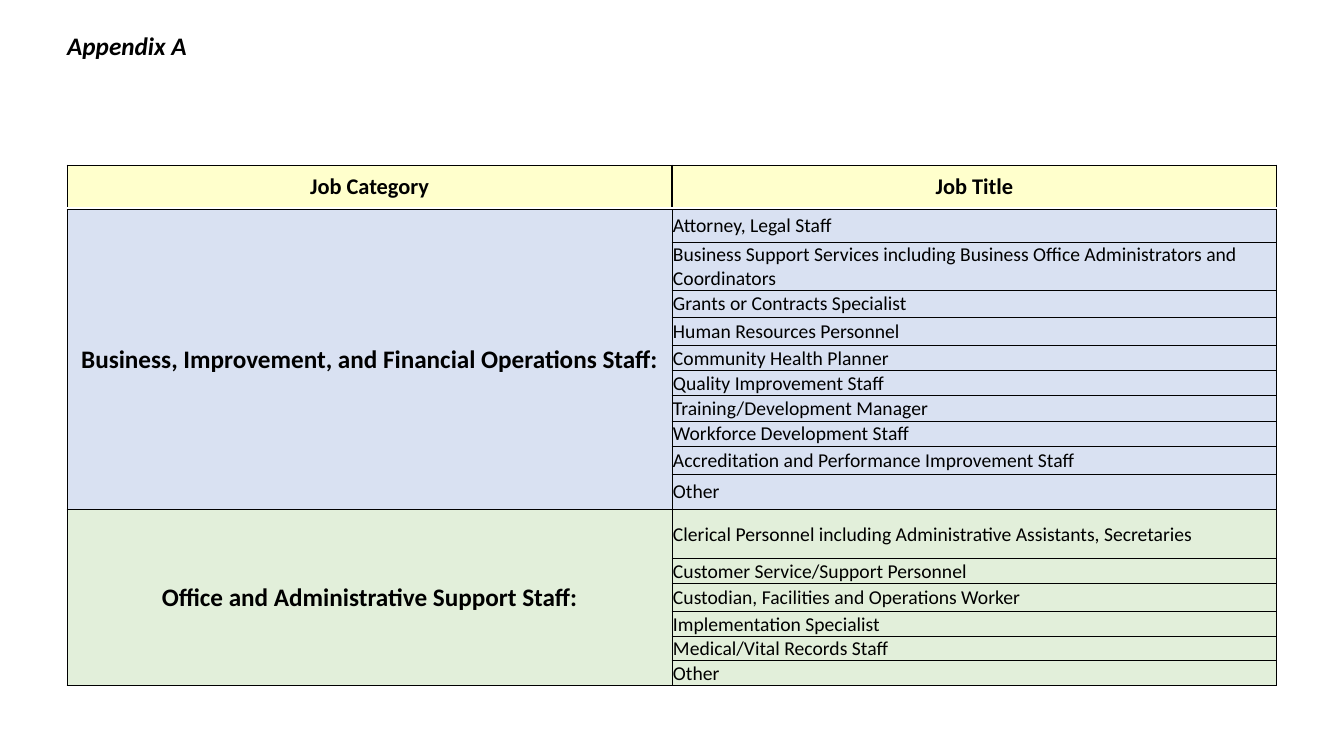
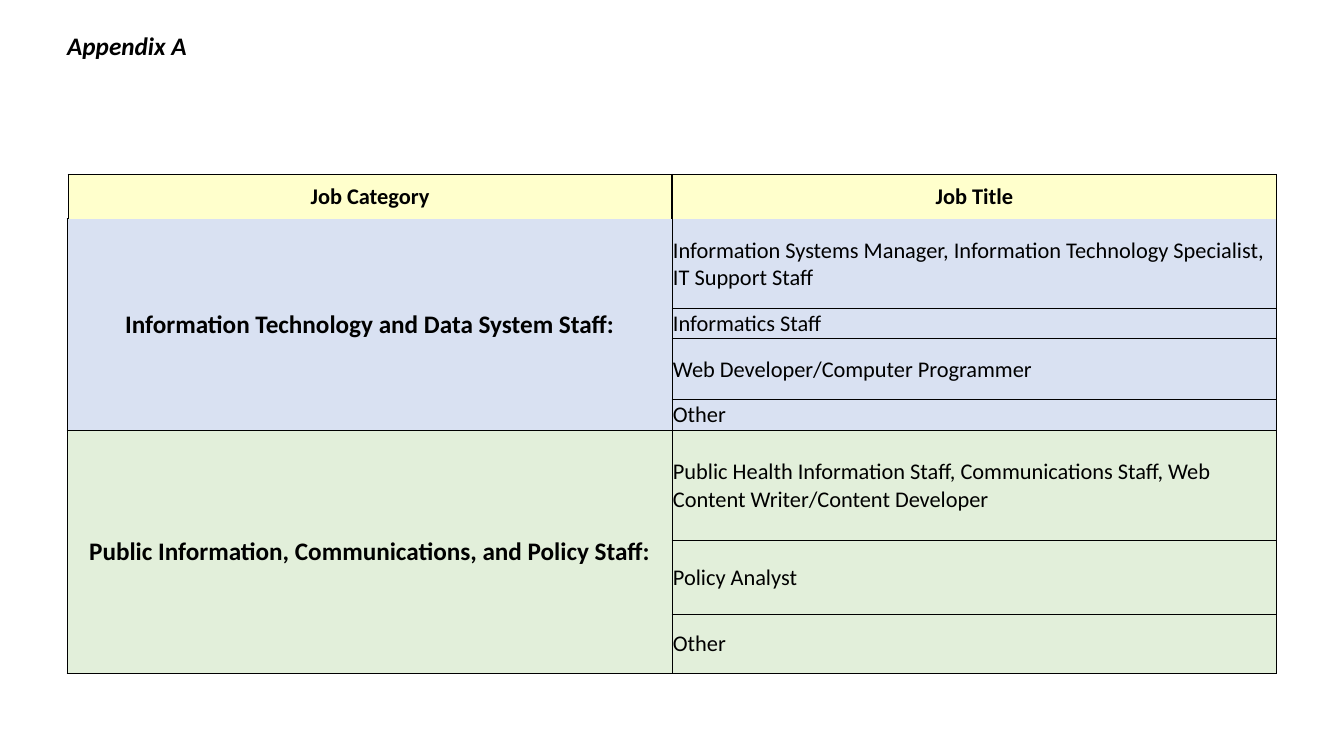
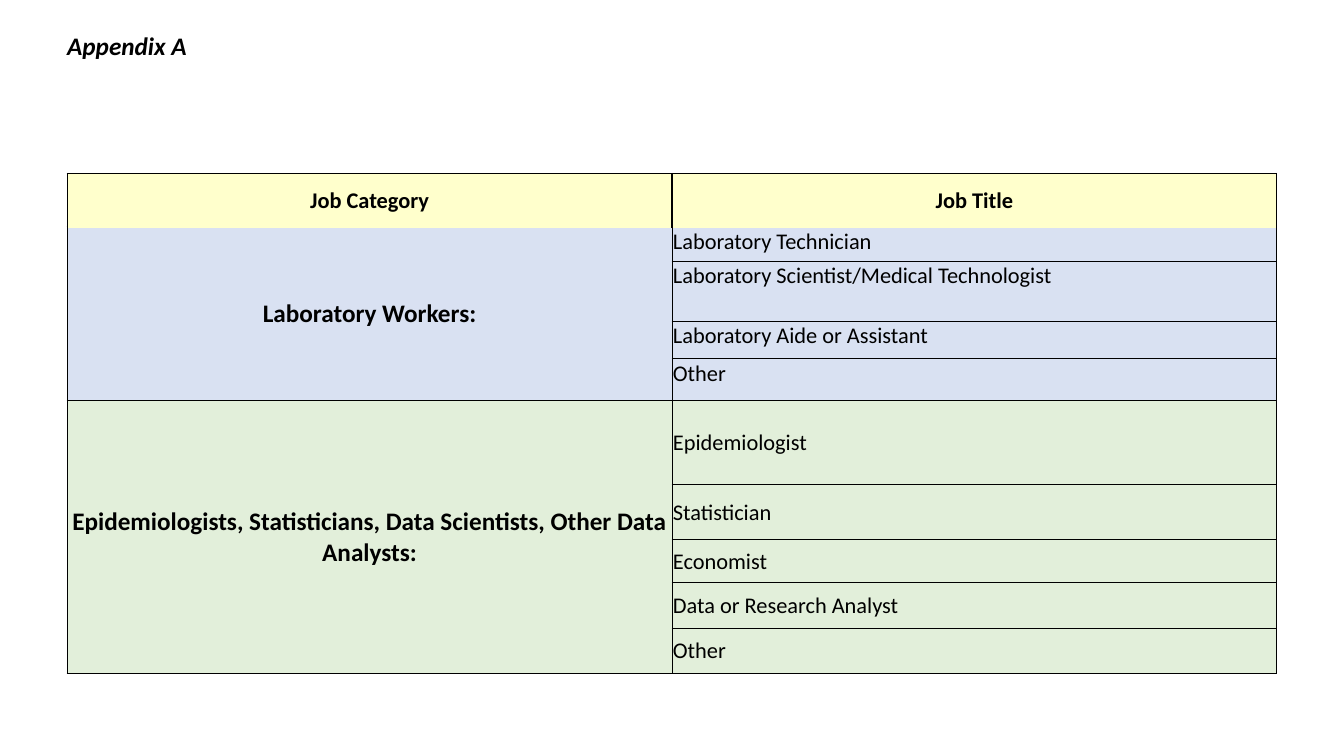
from dataclasses import dataclass
from typing import Optional

from lxml import etree
from pptx import Presentation
from pptx import util as u
from pptx.dml.color import RGBColor
from pptx.enum import text
from pptx.oxml import ns

BLACK = RGBColor(0x00, 0x00, 0x00)
HEADER_YELLOW = RGBColor(0xFF, 0xFF, 0xCC)
GROUP_COLORS = (RGBColor(0xD9, 0xE1, 0xF2), RGBColor(0xE2, 0xEF, 0xDA))

FONT = "Calibri"
TITLE = "Appendix A"
HEADINGS = ("Job Category", "Job Title")

SLIDE_WIDTH = u.Inches(13.33)
SLIDE_HEIGHT = u.Inches(7.5)
GRID = SLIDE_HEIGHT // 750
MARGIN = int(SLIDE_WIDTH * 0.05)
CONTENT_WIDTH = SLIDE_WIDTH - 2 * MARGIN
TITLE_TOP = TITLE_HEIGHT = int(SLIDE_HEIGHT * 0.04)
CELL_INSET = u.Inches(0.01)
THIN, THICK = 0.5, 1.0


@dataclass(frozen=True)
class JobTitle:
    name: str
    grid_rows: int


@dataclass(frozen=True)
class JobGroup:
    category: str
    jobs: tuple[JobTitle, ...]
    anchor: text.MSO_ANCHOR = text.MSO_ANCHOR.MIDDLE


@dataclass(frozen=True)
class JobPage:
    header_top: int
    header_rows: int
    body_top: int
    job_size: int
    groups: tuple[JobGroup, ...]
    header_indent: int = 0


@dataclass(frozen=True)
class Borders:
    left: Optional[float] = THIN
    right: Optional[float] = THIN
    top: Optional[float] = THIN
    bottom: Optional[float] = THIN


HEADER_BORDERS = Borders(THICK, THICK, THICK, None)
CATEGORY_BORDERS = Borders(THICK, THIN, THICK, THICK)

PAGES = (
    JobPage(164, 41, 208, 14, (
        JobGroup("Business, Improvement, and Financial Operations Staff:", (
            JobTitle("Attorney, Legal Staff", 32),
            JobTitle("Business Support Services including Business Office "
                     "Administrators and Coordinators", 46),
            JobTitle("Grants or Contracts Specialist", 27),
            JobTitle("Human Resources Personnel", 28),
            JobTitle("Community Health Planner", 25),
            JobTitle("Quality Improvement Staff", 24),
            JobTitle("Training/Development Manager", 26),
            JobTitle("Workforce Development Staff", 22),
            JobTitle("Accreditation and Performance Improvement Staff", 28),
            JobTitle("Other", 35),
        )),
        JobGroup("Office and Administrative Support Staff:", (
            JobTitle("Clerical Personnel including Administrative Assistants, "
                     "Secretaries", 49),
            JobTitle("Customer Service/Support Personnel", 24),
            JobTitle("Custodian, Facilities and Operations Worker", 28),
            JobTitle("Implementation Specialist", 19),
            JobTitle("Medical/Vital Records Staff", 24),
            JobTitle("Other", 23),
        )),
    )),
    JobPage(173, 44, 217, 16, (
        JobGroup("Information Technology and Data System Staff:", (
            JobTitle("Information Systems Manager, Information Technology "
                     "Specialist, IT Support Staff", 89),
            JobTitle("Informatics Staff", 30),
            JobTitle("Web Developer/Computer Programmer", 60),
            JobTitle("Other", 31),
        )),
        JobGroup("Public Information, Communications, and Policy Staff:", (
            JobTitle("Public Health Information Staff, Communications Staff, "
                     "Web Content Writer/Content Developer", 109),
            JobTitle("Policy Analyst", 73),
            JobTitle("Other", 59),
        )),
    ), header_indent=1),
    JobPage(172, 54, 225, 16, (
        JobGroup("Laboratory Workers:", (
            JobTitle("Laboratory Technician", 34),
            JobTitle("Laboratory Scientist/Medical Technologist", 60),
            JobTitle("Laboratory Aide or Assistant", 37),
            JobTitle("Other", 41),
        ), anchor=text.MSO_ANCHOR.TOP),
        JobGroup("Epidemiologists, Statisticians, Data Scientists, "
                 "Other Data Analysts:", (
            JobTitle("Epidemiologist", 84),
            JobTitle("Statistician", 54),
            JobTitle("Economist", 43),
            JobTitle("Data or Research Analyst", 45),
            JobTitle("Other", 45),
        )),
    )),
)


def write_text(frame, content: str, *, size: int, bold: bool = False,
               italic: bool = False, alignment=text.PP_ALIGN.LEFT) -> None:
    frame.word_wrap = True
    paragraph = frame.paragraphs[0]
    paragraph.alignment = alignment
    run = paragraph.add_run()
    run.text = content
    run.font.name = FONT
    run.font.size = u.Pt(size)
    run.font.bold = bold
    run.font.italic = italic
    run.font.color.rgb = BLACK


def set_borders(cell, borders: Borders) -> None:
    properties = cell._tc.get_or_add_tcPr()
    sides = (("L", borders.left), ("R", borders.right),
             ("T", borders.top), ("B", borders.bottom))
    for side, points in sides:
        line = etree.SubElement(properties, ns.qn(f"a:ln{side}"))
        if points is None:
            etree.SubElement(line, ns.qn("a:noFill"))
            continue
        line.set("w", str(u.Pt(points)))
        fill = etree.SubElement(line, ns.qn("a:solidFill"))
        etree.SubElement(fill, ns.qn("a:srgbClr"), val=str(BLACK))


def style_cell(cell, color: RGBColor, borders: Borders,
               anchor=text.MSO_ANCHOR.MIDDLE) -> None:
    set_borders(cell, borders)
    cell.fill.solid()
    cell.fill.fore_color.rgb = color
    cell.margin_left = cell.margin_right = cell.margin_top = CELL_INSET
    cell.margin_bottom = 0
    cell.vertical_anchor = anchor


def add_grid_table(slide, top: int, row_heights: list[int], indent: int = 0):
    left = MARGIN + indent * GRID
    width = CONTENT_WIDTH - indent * GRID
    table = slide.shapes.add_table(
        len(row_heights), 2, left, top * GRID, width, sum(row_heights) * GRID).table
    table.first_row = table.horz_banding = False
    table.columns[1].width = CONTENT_WIDTH // 2
    table.columns[0].width = width - table.columns[1].width
    for row, height in zip(table.rows, row_heights):
        row.height = height * GRID
    return table


def add_title(slide) -> None:
    box = slide.shapes.add_textbox(MARGIN, TITLE_TOP, CONTENT_WIDTH, TITLE_HEIGHT)
    frame = box.text_frame
    frame.margin_left = frame.margin_right = 0
    frame.margin_top = frame.margin_bottom = 0
    frame.auto_size = text.MSO_AUTO_SIZE.SHAPE_TO_FIT_TEXT
    write_text(frame, TITLE, size=18, bold=True, italic=True)


def add_body(slide, page: JobPage) -> None:
    heights = [job.grid_rows for group in page.groups for job in group.jobs]
    table = add_grid_table(slide, page.body_top, heights)
    first = 0
    for group, color in zip(page.groups, GROUP_COLORS):
        last = first + len(group.jobs) - 1
        for row, job in enumerate(group.jobs, first):
            style_cell(table.cell(row, 0), color, CATEGORY_BORDERS)
            job_cell = table.cell(row, 1)
            borders = Borders(top=THICK if row == first else THIN,
                              bottom=THICK if row == last else THIN)
            style_cell(job_cell, color, borders, group.anchor)
            write_text(job_cell.text_frame, job.name, size=page.job_size)
        category = table.cell(first, 0)
        category.merge(table.cell(last, 0))
        write_text(category.text_frame, group.category, size=18, bold=True,
                   alignment=text.PP_ALIGN.CENTER)
        first = last + 1


def add_header(slide, page: JobPage) -> None:
    table = add_grid_table(slide, page.header_top, [page.header_rows],
                           page.header_indent)
    for column, heading in enumerate(HEADINGS):
        cell = table.cell(0, column)
        style_cell(cell, HEADER_YELLOW, HEADER_BORDERS)
        write_text(cell.text_frame, heading, size=16, bold=True,
                   alignment=text.PP_ALIGN.CENTER)


def main() -> None:
    presentation = Presentation()
    presentation.slide_width = SLIDE_WIDTH
    presentation.slide_height = SLIDE_HEIGHT
    blank_layout = presentation.slide_layouts[6]
    for page in PAGES:
        slide = presentation.slides.add_slide(blank_layout)
        add_title(slide)
        add_body(slide, page)
        add_header(slide, page)
    presentation.save("out.pptx")


if __name__ == "__main__":
    main()
